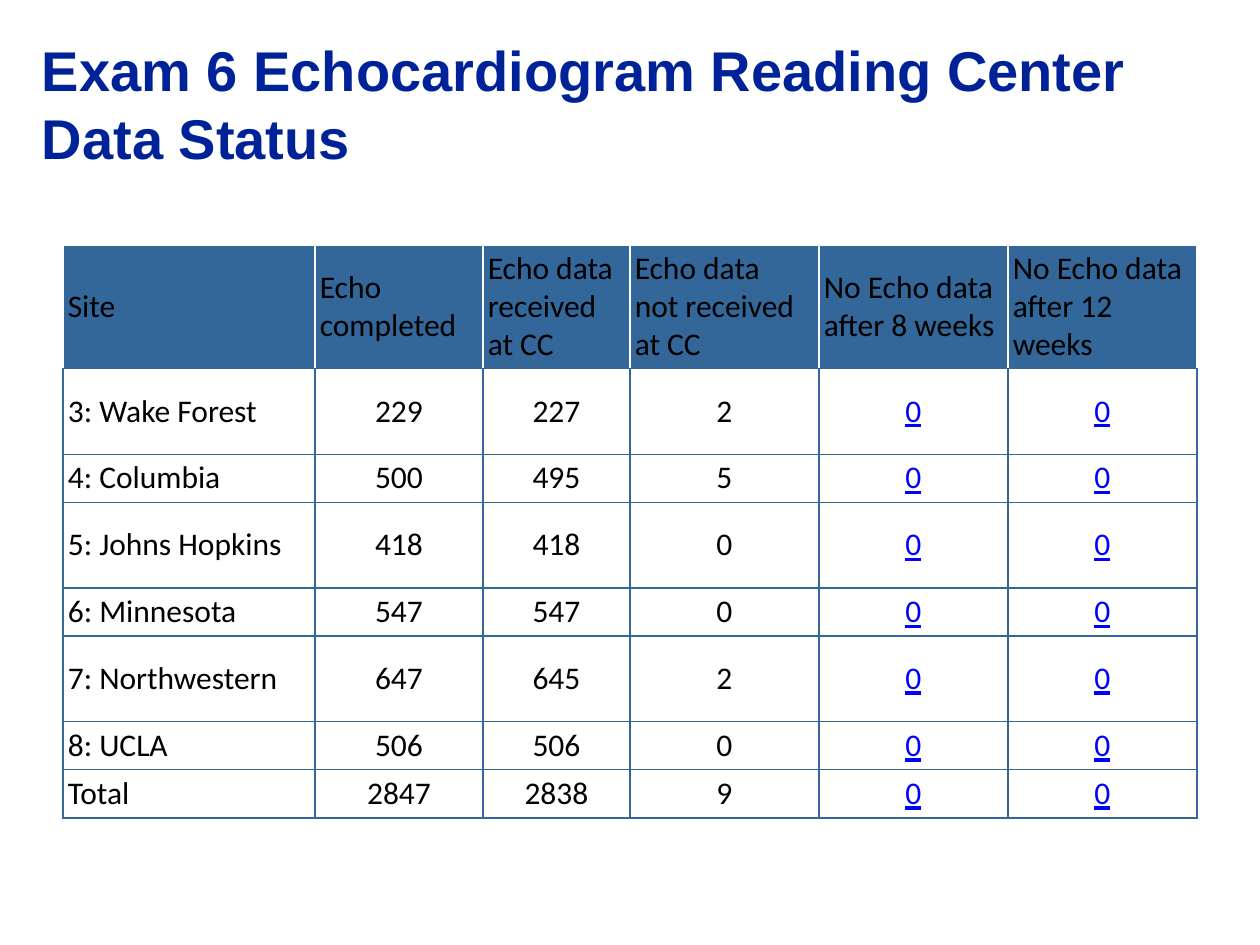
from lxml import etree
from pptx import Presentation
from pptx.dml.color import RGBColor
from pptx.enum.text import MSO_ANCHOR, PP_ALIGN
from pptx.oxml.ns import qn
from pptx.util import Pt

LEFT, CENTER = PP_ALIGN.LEFT, PP_ALIGN.CENTER
TOP, MIDDLE = MSO_ANCHOR.TOP, MSO_ANCHOR.MIDDLE

COLORS = {
    "title": "002299",
    "text": "000000",
    "link": "0000FF",
    "grid": "336699",
    "white": "FFFFFF",
}

TITLE = "Exam 6 Echocardiogram Reading Center Data Status"
HEADERS = [
    "Site",
    "Echo\ncompleted",
    "Echo data\vreceived at CC",
    "Echo data\vnot received at CC",
    "No Echo data\vafter 8 weeks",
    "No Echo data\vafter 12 weeks",
]
SITES = [
    ("3: Wake Forest", 229, 227, 2, 0, 0),
    ("4: Columbia", 500, 495, 5, 0, 0),
    ("5: Johns Hopkins", 418, 418, 0, 0, 0),
    ("6: Minnesota", 547, 547, 0, 0, 0),
    ("7: Northwestern", 647, 645, 2, 0, 0),
    ("8: UCLA", 506, 506, 0, 0, 0),
    ("Total", 2847, 2838, 9, 0, 0),
]
COLUMN_WIDTHS = [144, 96, 84, 108, 108, 108]
HEADER_HEIGHT, TALL, SHORT = 70.5, 49, 27.5
ROW_HEIGHTS = [HEADER_HEIGHT, TALL, SHORT, TALL, SHORT, TALL, SHORT, SHORT]
FIRST_LINK_COLUMN = 4
BORDER_WIDTH = 0.75

TITLE_FONT = {"name": "Arial", "size": Pt(32), "bold": True}
CELL_FONT = {"name": "Calibri", "size": Pt(18), "bold": False}
TITLE_FRAME = {
    "word_wrap": True, "vertical_anchor": TOP,
    "margin_left": 0, "margin_top": Pt(4), "margin_right": 0, "margin_bottom": 0,
}
CELL_FRAME = {
    "vertical_anchor": MIDDLE,
    "margin_left": Pt(2.75), "margin_top": Pt(2.25),
    "margin_right": Pt(2.75), "margin_bottom": Pt(2.25),
}


def apply(target, values):
    for name, value in values.items():
        setattr(target, name, value)


def write(text_frame, text, font, color, alignment=LEFT):
    text_frame.text = text
    for paragraph in text_frame.paragraphs:
        paragraph.alignment = alignment
        for run in paragraph.runs:
            apply(run.font, font)
            run.font.color.rgb = RGBColor.from_string(COLORS[color])


def set_borders(cell, sides):
    properties = cell._tc.get_or_add_tcPr()
    for position, (side, color) in enumerate(sides.items()):
        line = etree.Element(qn(f"a:ln{side}"), w=str(Pt(BORDER_WIDTH)))
        fill = etree.SubElement(line, qn("a:solidFill"))
        etree.SubElement(fill, qn("a:srgbClr"), val=COLORS[color])
        properties.insert(position, line)


def add_title(slide):
    shape = slide.shapes.add_textbox(Pt(24), Pt(16.5), Pt(684), Pt(137))
    apply(shape.text_frame, TITLE_FRAME)
    write(shape.text_frame, TITLE, TITLE_FONT, "title")


def add_status_table(slide):
    rows = [HEADERS, *SITES]
    table = slide.shapes.add_table(
        len(rows), len(HEADERS), Pt(36), Pt(140),
        Pt(sum(COLUMN_WIDTHS)), Pt(sum(ROW_HEIGHTS)),
    ).table
    table.horz_banding = False
    for column, width in zip(table.columns, COLUMN_WIDTHS):
        column.width = Pt(width)
    for row, height in zip(table.rows, ROW_HEIGHTS):
        row.height = Pt(height)

    for row_index, values in enumerate(rows):
        is_header = row_index == 0
        edge = "white" if is_header else "grid"
        for column_index, value in enumerate(values):
            is_link = not is_header and column_index >= FIRST_LINK_COLUMN
            is_label = is_header or column_index == 0
            cell = table.cell(row_index, column_index)
            apply(cell, CELL_FRAME)
            cell.fill.solid()
            cell.fill.fore_color.rgb = RGBColor.from_string(
                COLORS["grid" if is_header else "white"])
            write(cell.text_frame, str(value), {**CELL_FONT, "underline": is_link},
                  "link" if is_link else "text", LEFT if is_label else CENTER)
            set_borders(cell, {"L": edge, "R": edge, "T": edge, "B": "grid"})


def main():
    presentation = Presentation()
    presentation.slide_width, presentation.slide_height = Pt(720), Pt(540)
    slide = presentation.slides.add_slide(presentation.slide_layouts[6])
    add_title(slide)
    add_status_table(slide)
    presentation.save("out.pptx")


if __name__ == "__main__":
    main()
